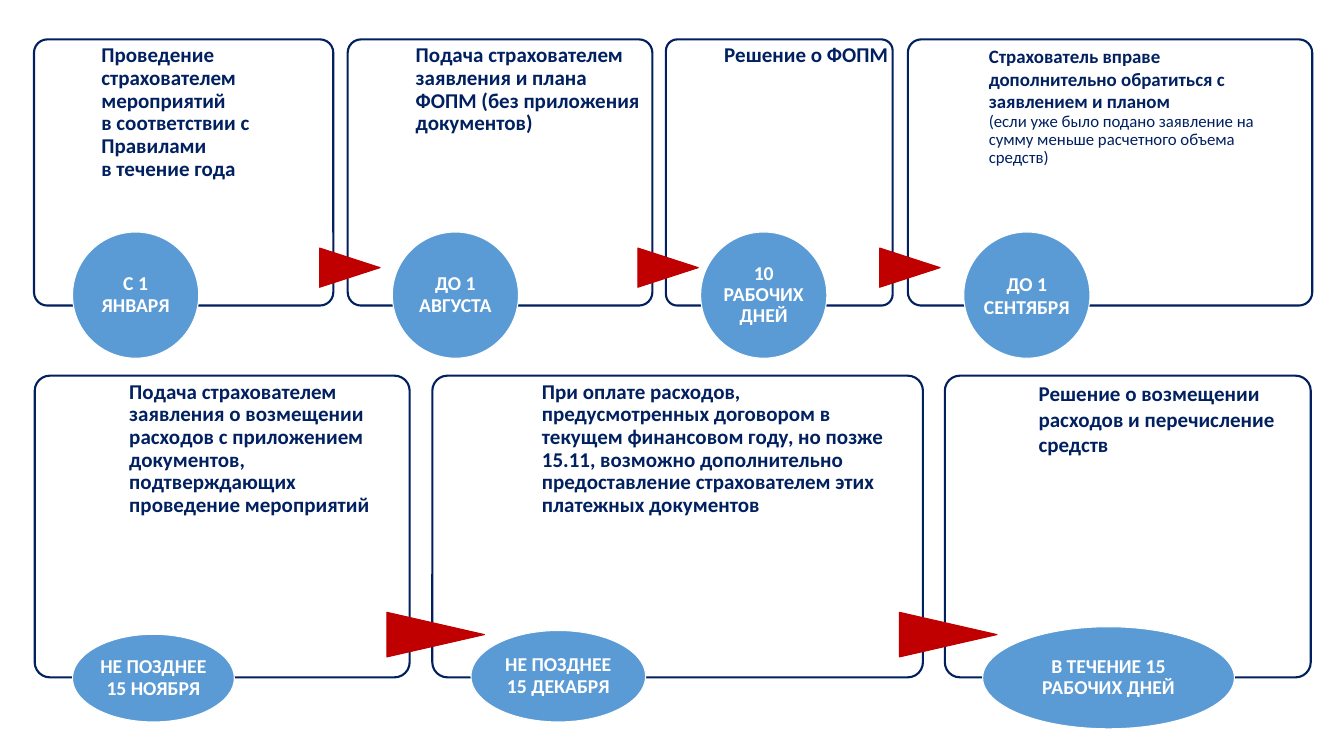
from pptx import Presentation
from pptx.dml.color import RGBColor
from pptx.enum import shapes, text
from pptx.util import Pt

COLORS = {"navy": "002060", "blue": "5B9BD5", "red": "C00000", "white": "FFFFFF"}
FONT = "Calibri"
BADGE_SIZE = 18.7

ROWS = [
    {
        "top": 37.5, "height": 253.5, "arrow": (57.6, 37.4), "arrow_middle": 254.9, "arrow_shift": 2,
        "steps": [
            {"card": (32.4, 285.1), "text": (96.5, 212.4),
             "body": [("Проведение страхователем мероприятий\nв соответствии с Правилами\nв течение года", 20, True, 0.9)],
             "badge": ("С 1 ЯНВАРЯ", 69.1, 221, 120.2, 120.2, 0.9)},
            {"card": (331.2, 290.2), "text": (396, 216),
             "body": [("Подача страхователем заявления и плана ФОПМ (без приложения документов)", 20, True, 0.9)],
             "badge": ("ДО 1 АВГУСТА", 373.7, 221, 120.2, 120.2, 0.9)},
            {"card": (634.3, 216), "text": (689.8, 161.3),
             "body": [("Решение о ФОПМ", 20, True, 0.9)],
             "badge": ("10 РАБОЧИХ ДНЕЙ", 667.4, 221, 120.2, 120.2, 0.9)},
            {"card": (864.7, 385.2), "text": (941.8, 287.3),
             "body": [("Страхователь вправе дополнительно обратиться с заявлением и планом", 18, True, 1.0),
                      ("(если уже было подано заявление на сумму меньше расчетного объема средств)", 16, False, 0.9)],
             "badge": ("ДО 1 СЕНТЯБРЯ", 918, 221, 120.2, 120.2, 1.0)},
        ],
    },
    {
        "top": 357.8, "height": 287.3, "arrow": (92.9, 42.5), "arrow_middle": 604.4, "arrow_shift": 3.2,
        "steps": [
            {"card": (33.1, 357.1), "text": (123.1, 265.7),
             "body": [("Подача страхователем заявления о возмещении расходов с приложением документов, "
                       "подтверждающих проведение мероприятий", 20, True, 0.9)],
             "badge": ("НЕ ПОЗДНЕЕ 15 НОЯБРЯ", 69.1, 604.1, 154.1, 83.5, 0.9)},
            {"card": (411.8, 467.3), "text": (516.2, 347.8),
             "body": [("При оплате расходов, предусмотренных договором в текущем финансовом году, "
                       "но позже 15.11, возможно дополнительно предоставление страхователем этих "
                       "платежных документов", 20, True, 0.9)],
             "badge": ("НЕ ПОЗДНЕЕ 15 ДЕКАБРЯ", 448.6, 600.5, 166.3, 87.1, 0.9)},
            {"card": (900, 348.5), "text": (989.3, 259.2),
             "body": [("Решение о возмещении расходов и перечисление", 20, True, 1.0),
                      ("средств", 20, True, 1.0)],
             "badge": ("В ТЕЧЕНИЕ 15 РАБОЧИХ ДНЕЙ", 936, 596.9, 239.8, 97.2, 0.9)},
        ],
    },
]


def color(name):
    return RGBColor.from_string(COLORS[name])


def add_box(slide, kind, left, top, width, height, fill, line, line_width):
    shape = slide.shapes.add_shape(kind, Pt(left), Pt(top), Pt(width), Pt(height))
    shape.shadow.inherit = False
    shape.fill.solid()
    shape.fill.fore_color.rgb = color(fill)
    shape.line.color.rgb = color(line)
    shape.line.width = Pt(line_width)
    return shape


def write(shape, paragraphs, font_color, align, anchor, insets):
    frame = shape.text_frame
    frame.word_wrap = True
    frame.vertical_anchor = anchor
    frame.margin_left, frame.margin_top, frame.margin_right, frame.margin_bottom = map(Pt, insets)
    for index, (words, size, bold, spacing) in enumerate(paragraphs):
        paragraph = frame.add_paragraph() if index else frame.paragraphs[0]
        paragraph.text = words
        paragraph.alignment = align
        paragraph.line_spacing = spacing
        paragraph.font.name = FONT
        paragraph.font.size = Pt(size)
        paragraph.font.bold = bold
        paragraph.font.color.rgb = color(font_color)


def add_card(slide, row, step):
    left, width = step["card"]
    card = add_box(slide, shapes.MSO_SHAPE.ROUNDED_RECTANGLE, left, row["top"], width, row["height"],
                   "white", "navy", 2)
    card.adjustments[0] = 0.05


def add_arrow(slide, row, step):
    length, thickness = row["arrow"]
    center = step["card"][0] + row["arrow_shift"]
    arrow = add_box(slide, shapes.MSO_SHAPE.FLOWCHART_EXTRACT, center - thickness / 2,
                    row["arrow_middle"] - length / 2, thickness, length, "red", "red", 1)
    arrow.rotation = 90


def add_body(slide, row, step):
    left, width = step["text"]
    box = slide.shapes.add_textbox(Pt(left), Pt(row["top"]), Pt(width), Pt(row["height"]))
    write(box, step["body"], "navy", text.PP_ALIGN.LEFT, text.MSO_ANCHOR.TOP, (0, 5, 0, 0))


def add_badge(slide, step):
    words, left, top, width, height, spacing = step["badge"]
    badge = add_box(slide, shapes.MSO_SHAPE.OVAL, left, top, width, height, "blue", "white", 1)
    write(badge, [(words, BADGE_SIZE, True, spacing)], "white",
          text.PP_ALIGN.CENTER, text.MSO_ANCHOR.MIDDLE, (0.7,) * 4)


def main():
    presentation = Presentation()
    presentation.slide_width, presentation.slide_height = Pt(1280.16), Pt(720)
    slide = presentation.slides.add_slide(presentation.slide_layouts[6])
    for row in ROWS:
        for index, step in enumerate(row["steps"]):
            add_card(slide, row, step)
            if index:
                add_arrow(slide, row, step)
            add_body(slide, row, step)
        for step in row["steps"]:
            add_badge(slide, step)
    presentation.save("out.pptx")


if __name__ == "__main__":
    main()
